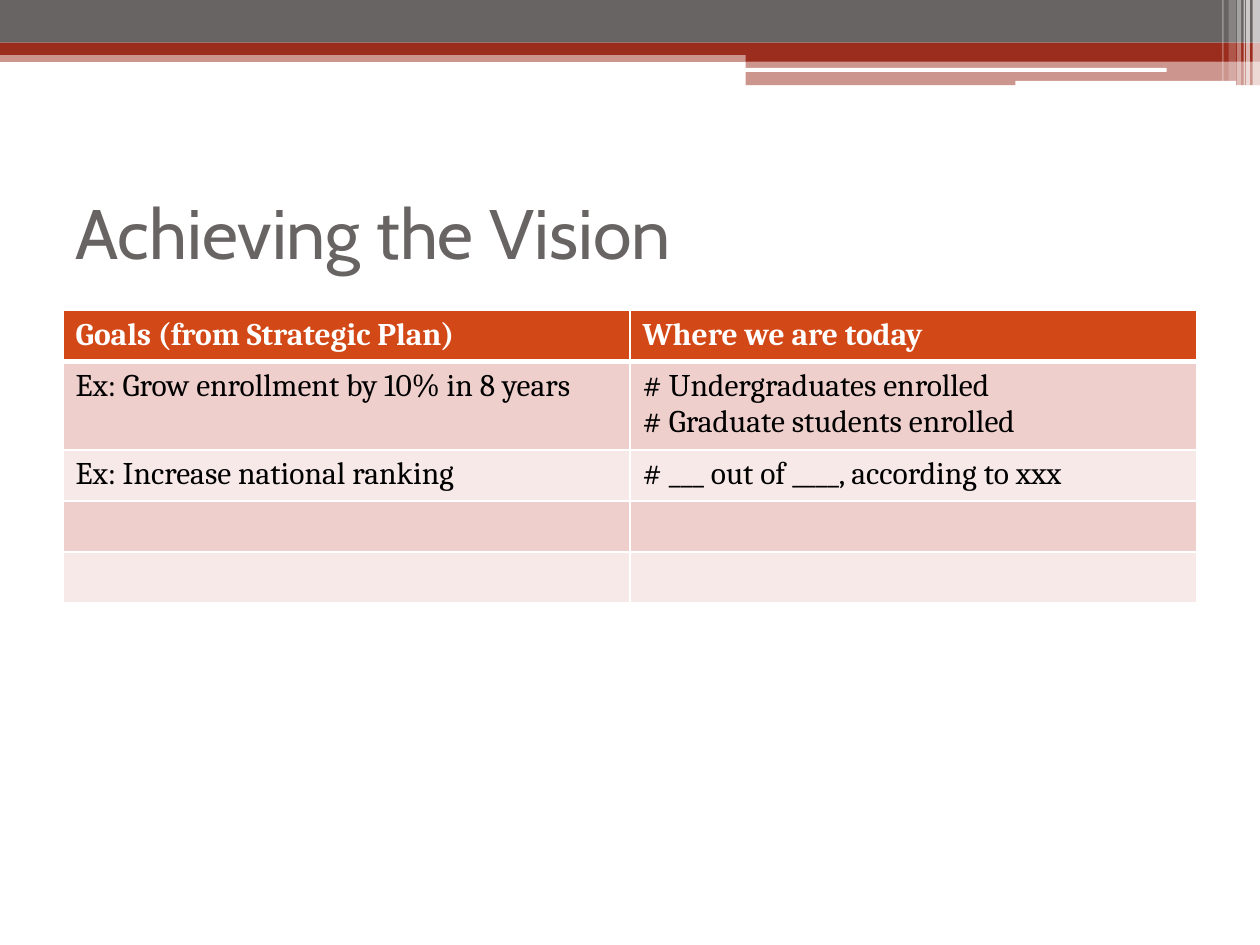
import dataclasses

import lxml.etree
import pptx
import pptx.dml.color
import pptx.enum.shapes
import pptx.enum.text
import pptx.oxml.ns
import pptx.util

Cm = pptx.util.Cm
Pt = pptx.util.Pt
RGB = pptx.dml.color.RGBColor.from_string
SHAPE = pptx.enum.shapes.MSO_SHAPE
qn = pptx.oxml.ns.qn


@dataclasses.dataclass(frozen=True)
class Theme:
    gray: str = "696464"
    red: str = "9B2D1F"
    white: str = "FFFFFF"
    black: str = "000000"
    header: str = "D34817"
    bands: tuple = ("EFCFCC", "F7E9E8")
    title_font: str = "Cabin"
    body_font: str = "Cambria"
    title_size: int = 40
    body_size: int = 18
    thin: int = 1
    thick: int = 3


THEME = Theme()

BANDS = [
    (0, 1.02, 25.4, 0.23, THEME.red, 50),
    (0, 0, 25.4, 0.86, THEME.gray, 100),
    (0, 0.86, 25.4, 0.25, THEME.red, 100),
    (15.03, 0.99, 10.37, 0.25, THEME.red, 100),
    (15.03, 1.23, 10.37, 0.49, THEME.red, 50),
]
SLOTS = [
    (15.01, 1.37, 8.51, 0.08),
    (20.47, 1.63, 4.45, 0.1),
]
STRIPES = [
    (25.25, 0.15, 1.73, 65),
    (25.12, 0.08, 1.73, 65),
    (25.07, 0.03, 1.73, 60),
    (24.94, 0.08, 1.73, 40),
    (24.77, 0.15, 1.63, 20),
    (24.64, 0.03, 1.63, 30),
]
ROWS = [
    ("Goals (from Strategic Plan)", "Where we are today"),
    ("Ex: Grow enrollment by 10% in 8 years",
     "# Undergraduates enrolled\n# Graduate students enrolled"),
    ("Ex: Increase national ranking", "# ___ out of ____, according to xxx"),
    ("", ""),
    ("", ""),
]
ROW_HEIGHTS = [1.03, 1.73, 1.03, 1.03, 1.03]


def add_block(s, x, y, w, h, color, opacity=100, kind=SHAPE.RECTANGLE):
    sp = s.shapes.add_shape(kind, Cm(x), Cm(y), Cm(w), Cm(h))
    sp.shadow.inherit = False
    sp.line.fill.background()
    sp.fill.solid()
    sp.fill.fore_color.rgb = RGB(color)
    if opacity < 100:
        clr = sp.fill._xPr.find(qn("a:solidFill"))[0]
        lxml.etree.SubElement(clr, qn("a:alpha"), val=str(opacity * 1000))


def format_font(font, color, **values):
    for name, value in values.items():
        setattr(font, name, value)
    font.color.rgb = RGB(color)


def add_title(s, text):
    tf = s.shapes.add_textbox(Cm(1.27), Cm(3.18), Cm(22.86), Cm(2.97)).text_frame
    settings = {"word_wrap": True,
                "vertical_anchor": pptx.enum.text.MSO_ANCHOR.MIDDLE}
    for name, value in settings.items():
        setattr(tf, name, value)
    r = tf.paragraphs[0].add_run()
    r.text = text
    format_font(r.font, THEME.gray, name=THEME.title_font,
                size=Pt(THEME.title_size))


def border_cell(cell, widths):
    tcPr = cell._tc.get_or_add_tcPr()
    for i, (side, width) in enumerate(widths.items()):
        ln = lxml.etree.Element(qn(f"a:ln{side}"), w=str(Pt(width)))
        fill = lxml.etree.SubElement(ln, qn("a:solidFill"))
        lxml.etree.SubElement(fill, qn("a:srgbClr"), val=THEME.white)
        tcPr.insert(i, ln)


def fill_cell(cell, text, row):
    is_header = row == 0
    cell.fill.solid()
    cell.fill.fore_color.rgb = RGB(
        THEME.header if is_header else THEME.bands[(row - 1) % 2])
    widths = dict.fromkeys("LRTB", THEME.thin)
    if is_header:
        widths["B"] = THEME.thick
    elif row == 1:
        widths["T"] = THEME.thick
    border_cell(cell, widths)
    cell.text_frame.text = text
    for p in cell.text_frame.paragraphs:
        for font in [p.font] + [r.font for r in p.runs]:
            format_font(font, THEME.white if is_header else THEME.black,
                        name=THEME.body_font, size=Pt(THEME.body_size),
                        bold=is_header)


def add_goals_table(s):
    table = s.shapes.add_table(len(ROWS), len(ROWS[0]), Cm(1.27), Cm(6.26),
                               Cm(22.86), Cm(sum(ROW_HEIGHTS))).table
    for i, (texts, height) in enumerate(zip(ROWS, ROW_HEIGHTS)):
        table.rows[i].height = Cm(height)
        for j, text in enumerate(texts):
            fill_cell(table.cell(i, j), text, i)


def main():
    prs = pptx.Presentation()
    prs.slide_width, prs.slide_height = Cm(25.4), Cm(19.05)
    s = prs.slides.add_slide(prs.slide_layouts[6])
    for band in BANDS:
        add_block(s, *band)
    for slot in SLOTS:
        add_block(s, *slot, THEME.white, kind=SHAPE.ROUNDED_RECTANGLE)
    for x, w, h, opacity in STRIPES:
        add_block(s, x, 0, w, h, THEME.white, opacity)
    add_title(s, "Achieving the Vision")
    add_goals_table(s)
    prs.save("out.pptx")


if __name__ == "__main__":
    main()
